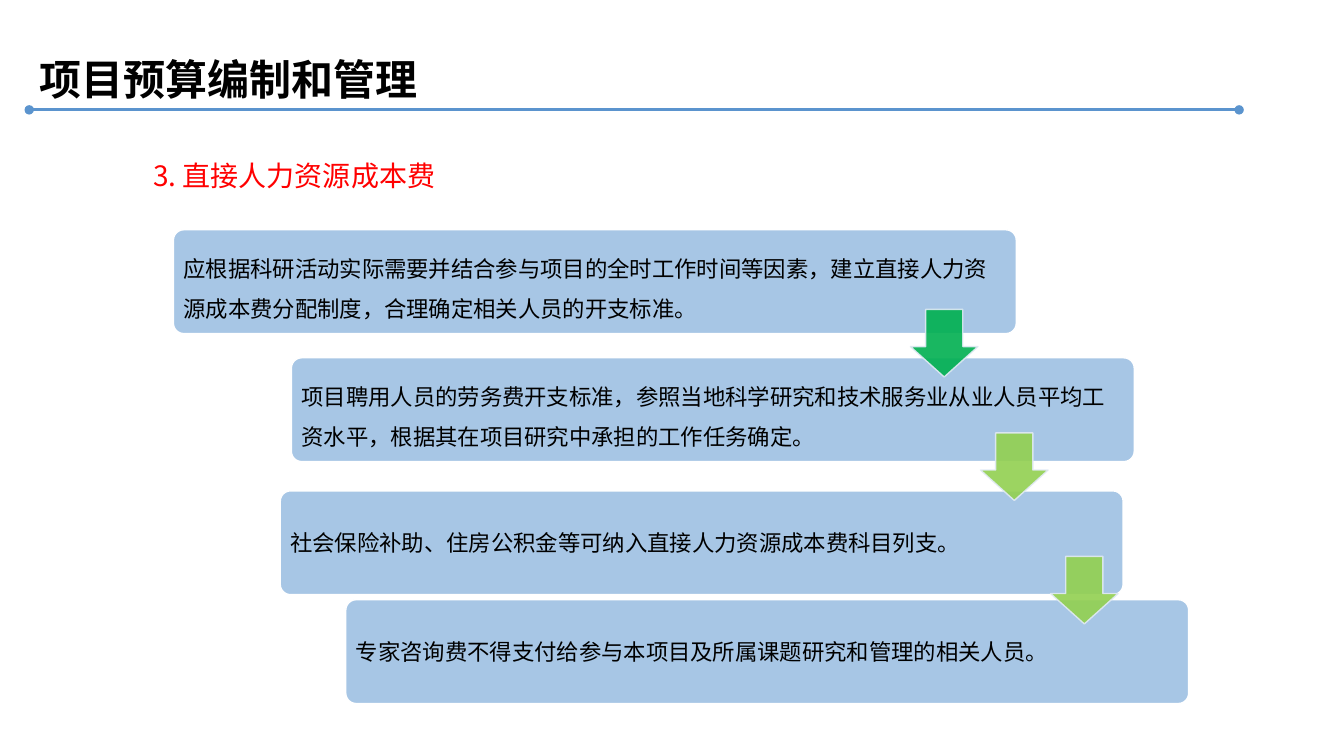
from dataclasses import dataclass

from lxml.etree import SubElement
from pptx import Presentation
from pptx.dml.color import RGBColor as RGB
from pptx.enum.shapes import MSO_CONNECTOR as CONN, MSO_SHAPE as SHAPE
from pptx.enum.text import MSO_ANCHOR as ANCHOR, MSO_AUTO_SIZE as AUTO, PP_ALIGN as ALIGN
from pptx.oxml.ns import qn
from pptx.util import Inches, Pt

# Content
TITLE = "项目预算编制和管理"
SUBTITLE = "3. 直接人力资源成本费"
# Step text, left, top, line spacing
STEPS = [
    ("应根据科研活动实际需要并结合参与项目的全时工作时间等因素，建立直接人力资源成本费分配制度，合理确定相关人员的开支标准。", 1.72, 2.28, 1.5),
    ("项目聘用人员的劳务费开支标准，参照当地科学研究和技术服务业从业人员平均工资水平，根据其在项目研究中承担的工作任务确定。", 2.89, 3.55, 1.5),
    ("社会保险补助、住房公积金等可纳入直接人力资源成本费科目列支。", 2.78, 4.87, 1.0),
    ("专家咨询费不得支付给参与本项目及所属课题研究和管理的相关人员。", 3.43, 5.95, 1.0),
]


@dataclass
class Theme:
    ink: RGB = RGB(0x00, 0x00, 0x00)
    red: RGB = RGB(0xFF, 0x00, 0x00)
    rule: RGB = RGB(0x5B, 0x94, 0xCE)
    box: RGB = RGB(0xA7, 0xC6, 0xE5)
    box_line: RGB = RGB(0xFF, 0xFF, 0xFF)
    arrow_line: RGB = RGB(0xE1, 0xEA, 0xF5)
    arrows: tuple = (RGB(0x00, 0xB0, 0x50), RGB(0x92, 0xD0, 0x50), RGB(0x92, 0xD0, 0x50))
    font: str = "Arial"
    cjk: str = "Noto Sans CJK SC"
    title_size: int = 30
    subtitle_size: int = 20
    body_size: int = 16


T = Theme()
BOX_W, BOX_H, BOX_INSET = 8.36, 1.03, 0.07
ARROW_X, ARROW_Y, ARROW_SIZE = 9.03, 3.07, 0.67
ARROW_DX, ARROW_DY = 0.695, 1.225


def write(tf, text, font, size, color, spacing, bold=False):
    tf.word_wrap = True
    p = tf.paragraphs[0]
    p.text = text
    p.alignment = ALIGN.LEFT
    p.line_spacing = spacing
    p.font.name, p.font.size, p.font.bold = font, Pt(size), bold
    p.font.color.rgb = color
    return p


def add_block(slide, kind, x, y, w, h, fill, line):
    sp = slide.shapes.add_shape(kind, Inches(x), Inches(y), Inches(w), Inches(h))
    sp.shadow.inherit = False
    sp.fill.solid()
    sp.fill.fore_color.rgb = fill
    sp.line.color.rgb = line
    sp.line.width = Pt(1)
    return sp


prs = Presentation()
prs.slide_width, prs.slide_height = Inches(13.33), Inches(7.5)
s = prs.slides.add_slide(prs.slide_layouts[5])

# Title
title = s.shapes.title
title.left, title.top, title.width, title.height = map(Inches, (0.29, 0.23, 10.69, 0.76))
tf = title.text_frame
write(tf, TITLE, T.font, T.title_size, T.ink, 1.5, bold=True)
tf.vertical_anchor = ANCHOR.TOP
tf.auto_size = AUTO.SHAPE_TO_FIT_TEXT

# Rule with round ends
rule = s.shapes.add_connector(CONN.STRAIGHT, Inches(0.29), Inches(1.09), Inches(12.29), Inches(1.09))
rule.line.color.rgb = T.rule
rule.line.width = Pt(2.25)
ln = rule.line._get_or_add_ln()
for end in ("a:headEnd", "a:tailEnd"):
    SubElement(ln, qn(end), type="oval")
SubElement(rule._element.spPr, qn("a:effectLst"))

# Subtitle
sub = s.shapes.add_textbox(Inches(1.42), Inches(1.19), Inches(6.67), Inches(0.69))
p = write(sub.text_frame, SUBTITLE, T.cjk, T.subtitle_size, T.red, 2.0)
p.alignment = ALIGN.JUSTIFY
sub.text_frame.auto_size = AUTO.SHAPE_TO_FIT_TEXT

# Step boxes
for text, x, y, spacing in STEPS:
    box = add_block(s, SHAPE.ROUNDED_RECTANGLE, x, y, BOX_W, BOX_H, T.box, T.box_line)
    box.adjustments[0] = 0.1
    tf = box.text_frame
    tf.margin_left = tf.margin_right = tf.margin_top = tf.margin_bottom = Inches(BOX_INSET)
    tf.vertical_anchor = ANCHOR.MIDDLE
    p = write(tf, text, T.font, T.body_size, T.ink, spacing)
    p.space_after = Pt(0.35 * T.body_size)

# Arrows between steps, slightly transparent
for i, color in enumerate(T.arrows):
    arrow = add_block(s, SHAPE.DOWN_ARROW, ARROW_X + i * ARROW_DX, ARROW_Y + i * ARROW_DY,
                      ARROW_SIZE, ARROW_SIZE, color, T.arrow_line)
    arrow.adjustments[0], arrow.adjustments[1] = 0.45, 0.55
    arrow.adjustments[0], arrow.adjustments[1] = 0.55, 0.45
    for clr in arrow._element.spPr.iter(qn("a:srgbClr")):
        SubElement(clr, qn("a:alpha"), val="90000")

prs.save("out.pptx")
